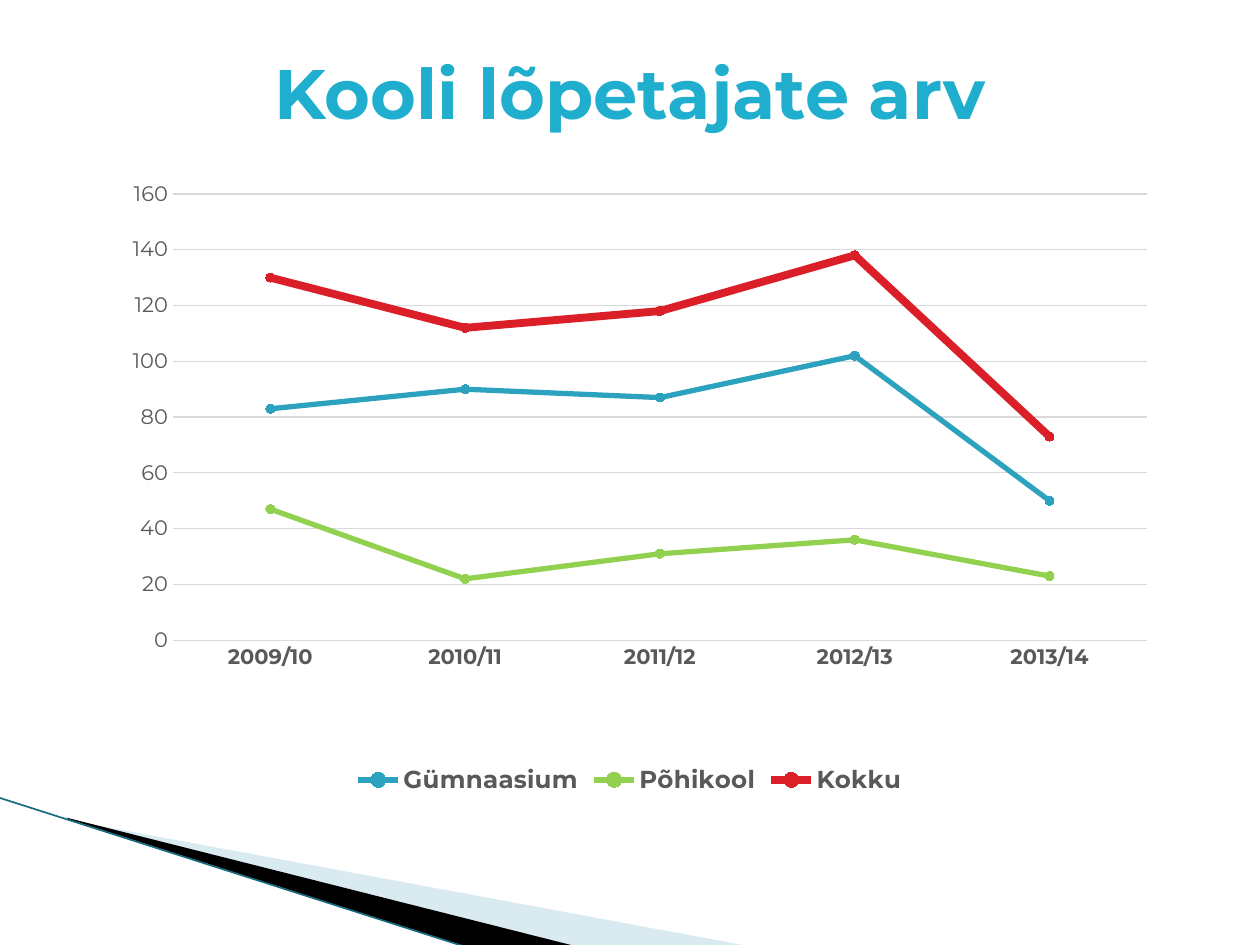
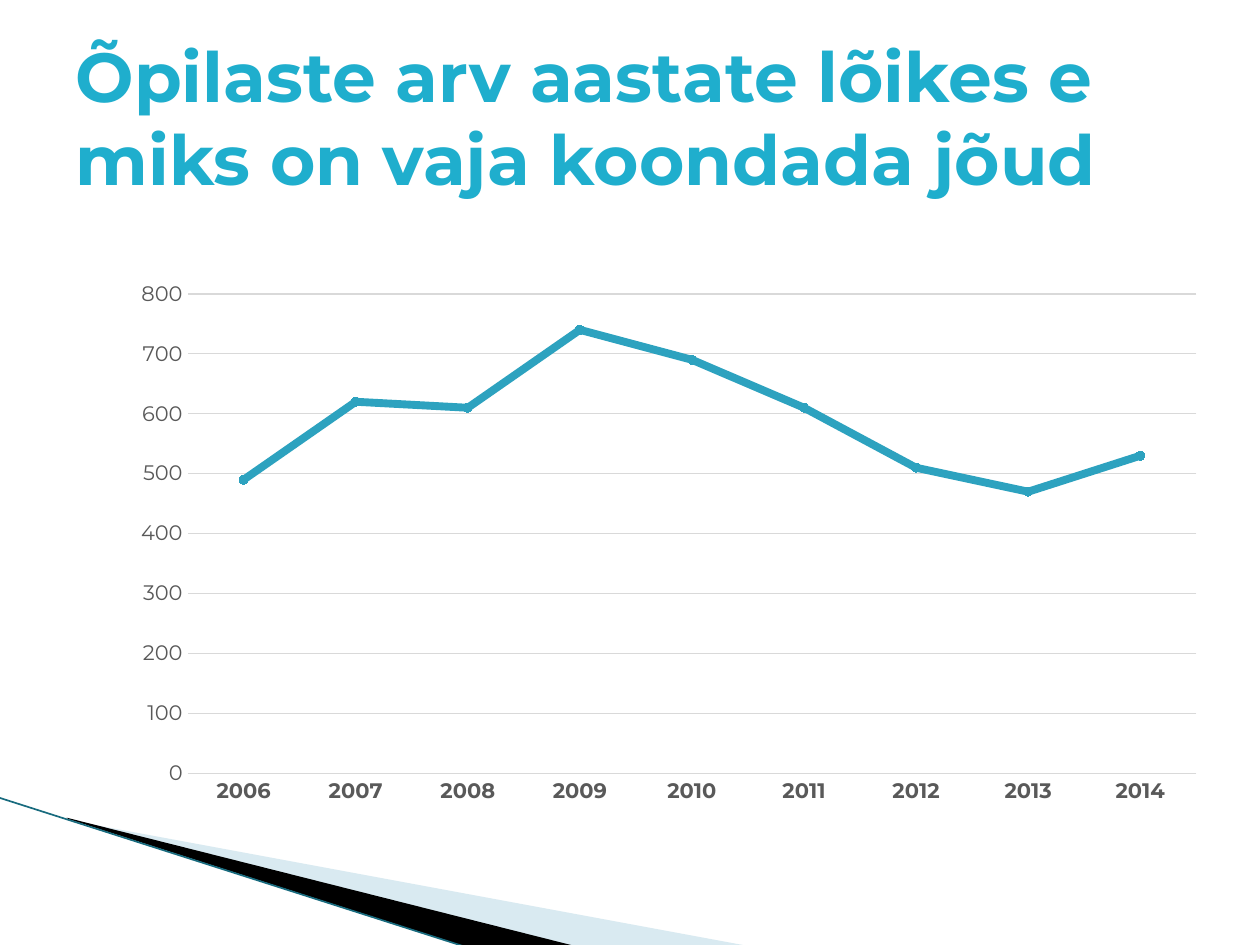
from dataclasses import dataclass

from lxml import etree
from pptx import Presentation
from pptx.chart.data import CategoryChartData
from pptx.dml.color import RGBColor
from pptx.enum.chart import XL_CHART_TYPE, XL_LEGEND_POSITION, XL_MARKER_STYLE, XL_TICK_MARK
from pptx.enum.shapes import MSO_CONNECTOR
from pptx.enum.text import MSO_ANCHOR, PP_ALIGN
from pptx.oxml import parse_xml
from pptx.oxml.ns import nsdecls, qn
from pptx.util import Pt

LINE_MARKERS = XL_CHART_TYPE.LINE_MARKERS
LEGEND_BOTTOM = XL_LEGEND_POSITION.BOTTOM
CIRCLE = XL_MARKER_STYLE.CIRCLE
NO_TICK = XL_TICK_MARK.NONE
STRAIGHT = MSO_CONNECTOR.STRAIGHT
MIDDLE = MSO_ANCHOR.MIDDLE
LEFT, CENTER = PP_ALIGN.LEFT, PP_ALIGN.CENTER

PX = 9144  # EMU in one px, at 100 px to the inch
FONT = "Montserrat"

TITLE_BLUE = RGBColor(0x1F, 0xAE, 0xCD)
TEAL = RGBColor(0x2D, 0xA2, 0xBF)
GREEN = RGBColor(0x92, 0xD0, 0x50)
RED = RGBColor(0xDA, 0x1F, 0x28)
GRAY_TEXT = RGBColor(0x59, 0x59, 0x59)
GRID_GRAY = RGBColor(0xD9, 0xD9, 0xD9)
PALE_BLUE = RGBColor(0xA0, 0xCB, 0xDC)
EDGE_TEAL = RGBColor(0x18, 0x6B, 0x7E)
BLACK = RGBColor(0, 0, 0)


@dataclass(frozen=True)
class Band:
    points: tuple
    color: RGBColor
    opacity: int = 100


@dataclass(frozen=True)
class Series:
    name: str
    values: tuple
    color: RGBColor
    width: float


@dataclass(frozen=True)
class ChartSlide:
    title: str
    title_height: int
    title_size: float
    alignment: PP_ALIGN
    chart_top: int
    plot: tuple  # x, y, width, height as parts of the chart
    categories: tuple
    series: tuple
    maximum: int
    step: int
    legend: bool = False


BANDS = (
    Band(((55, 651), (595, 751), (456, 751), (55, 650)), PALE_BLUE, 40),
    Band(((53, 649), (457, 751), (372, 752), (54, 650)), BLACK),
)
BAND_EDGE = (-1, 633, 371, 752)

SLIDES = (
    ChartSlide(
        "Kooli lõpetajate arv", 85, 40, CENTER, 107, (0.097, 0.089, 0.859, 0.671),
        ("2009/10", "2010/11", "2011/12", "2012/13", "2013/14"),
        (
            Series("Gümnaasium", (83, 90, 87, 102, 50), TEAL, 3),
            Series("Põhikool", (47, 22, 31, 36, 23), GREEN, 3),
            Series("Kokku", (130, 112, 118, 138, 73), RED, 4.5),
        ),
        160, 20, legend=True,
    ),
    ChartSlide(
        "Õpilaste arv aastate lõikes e miks on vaja koondada jõud",
        125, 39.6, LEFT, 162, (0.11, 0.135, 0.89, 0.721),
        tuple(str(year) for year in range(2006, 2015)),
        (Series("Series 1", (490, 620, 610, 740, 690, 610, 510, 470, 530), TEAL, 4.5),),
        800, 100,
    ),
)


def set_font(font, size: float, color: RGBColor, bold: bool) -> None:
    for name, value in {"name": FONT, "size": Pt(size), "bold": bold}.items():
        setattr(font, name, value)
    font.color.rgb = color


def set_line(line, color: RGBColor, width: float) -> None:
    line.color.rgb = color
    line.width = Pt(width)


def draw_bands(slide) -> None:
    for band in BANDS:
        builder = slide.shapes.build_freeform(*band.points[0], scale=PX)
        builder.add_line_segments(band.points[1:], close=True)
        shape = builder.convert_to_shape()
        shape.shadow.inherit = False
        shape.fill.solid()
        shape.fill.fore_color.rgb = band.color
        shape.line.fill.background()
        if band.opacity < 100:
            color = shape.fill._xPr.find(qn("a:solidFill"))[0]
            etree.SubElement(color, qn("a:alpha"), val=str(band.opacity * 1000))
    edge = slide.shapes.add_connector(STRAIGHT, *(value * PX for value in BAND_EDGE))
    set_line(edge.line, EDGE_TEAL, 0.95)
    etree.SubElement(edge._element.spPr, qn("a:effectLst"))


def write_title(slide, content: ChartSlide) -> None:
    title = slide.shapes.title
    box = {"left": 50, "top": 30, "width": 900, "height": content.title_height}
    for name, value in box.items():
        setattr(title, name, value * PX)
    frame = title.text_frame
    frame.text = content.title
    frame.word_wrap = True
    frame.vertical_anchor = MIDDLE
    paragraph = frame.paragraphs[0]
    paragraph.alignment = content.alignment
    set_font(paragraph.runs[0].font, content.title_size, TITLE_BLUE, True)


def place_plot(chart, plot: tuple) -> None:
    """Fix the inner plot area inside the chart."""
    sizes = "".join(f'<c:{tag} val="{value}"/>' for tag, value in zip("xywh", plot))
    layout = parse_xml(
        f'<c:layout {nsdecls("c")}><c:manualLayout><c:layoutTarget val="inner"/>'
        f'<c:xMode val="edge"/><c:yMode val="edge"/>{sizes}</c:manualLayout></c:layout>'
    )
    plot_area = chart._chartSpace.chart.plotArea
    for old_layout in plot_area.findall(qn("c:layout")):
        plot_area.remove(old_layout)
    plot_area.insert(0, layout)


def format_axes(chart, content: ChartSlide) -> None:
    for axis, bold in ((chart.category_axis, True), (chart.value_axis, False)):
        axis.major_tick_mark = axis.minor_tick_mark = NO_TICK
        set_font(axis.tick_labels.font, 12, GRAY_TEXT, bold)
    set_line(chart.category_axis.format.line, GRID_GRAY, 0.75)
    value_axis = chart.value_axis
    scale = {"minimum_scale": 0, "maximum_scale": content.maximum, "major_unit": content.step}
    for name, value in scale.items():
        setattr(value_axis, name, value)
    value_axis.format.line.fill.background()
    value_axis.has_major_gridlines = True
    set_line(value_axis.major_gridlines.format.line, GRID_GRAY, 0.75)


def draw_chart(slide, content: ChartSlide) -> None:
    data = CategoryChartData()
    data.categories = content.categories
    for series in content.series:
        data.add_series(series.name, series.values)
    box = (50, content.chart_top, 900, 528)
    chart = slide.shapes.add_chart(LINE_MARKERS, *(value * PX for value in box), data).chart
    chart.has_title = False
    set_font(chart.font, 12, GRAY_TEXT, False)
    place_plot(chart, content.plot)
    format_axes(chart, content)

    # Lines and their markers
    chart.plots[0].vary_by_categories = False
    for line, series in zip(chart.plots[0].series, content.series):
        line.smooth = False
        set_line(line.format.line, series.color, series.width)
        line.marker.style = CIRCLE
        line.marker.size = 5
        line.marker.format.fill.solid()
        line.marker.format.fill.fore_color.rgb = series.color
        line.marker.format.line.color.rgb = series.color

    chart.has_legend = content.legend
    if content.legend:
        chart.legend.position = LEGEND_BOTTOM
        chart.legend.include_in_layout = False
        set_font(chart.legend.font, 14, GRAY_TEXT, True)


def main() -> None:
    presentation = Presentation()
    presentation.slide_width = 1000 * PX
    presentation.slide_height = 750 * PX
    title_only = presentation.slide_layouts[5]
    for content in SLIDES:
        slide = presentation.slides.add_slide(title_only)
        draw_bands(slide)
        write_title(slide, content)
        draw_chart(slide, content)
    presentation.save("out.pptx")


if __name__ == "__main__":
    main()
